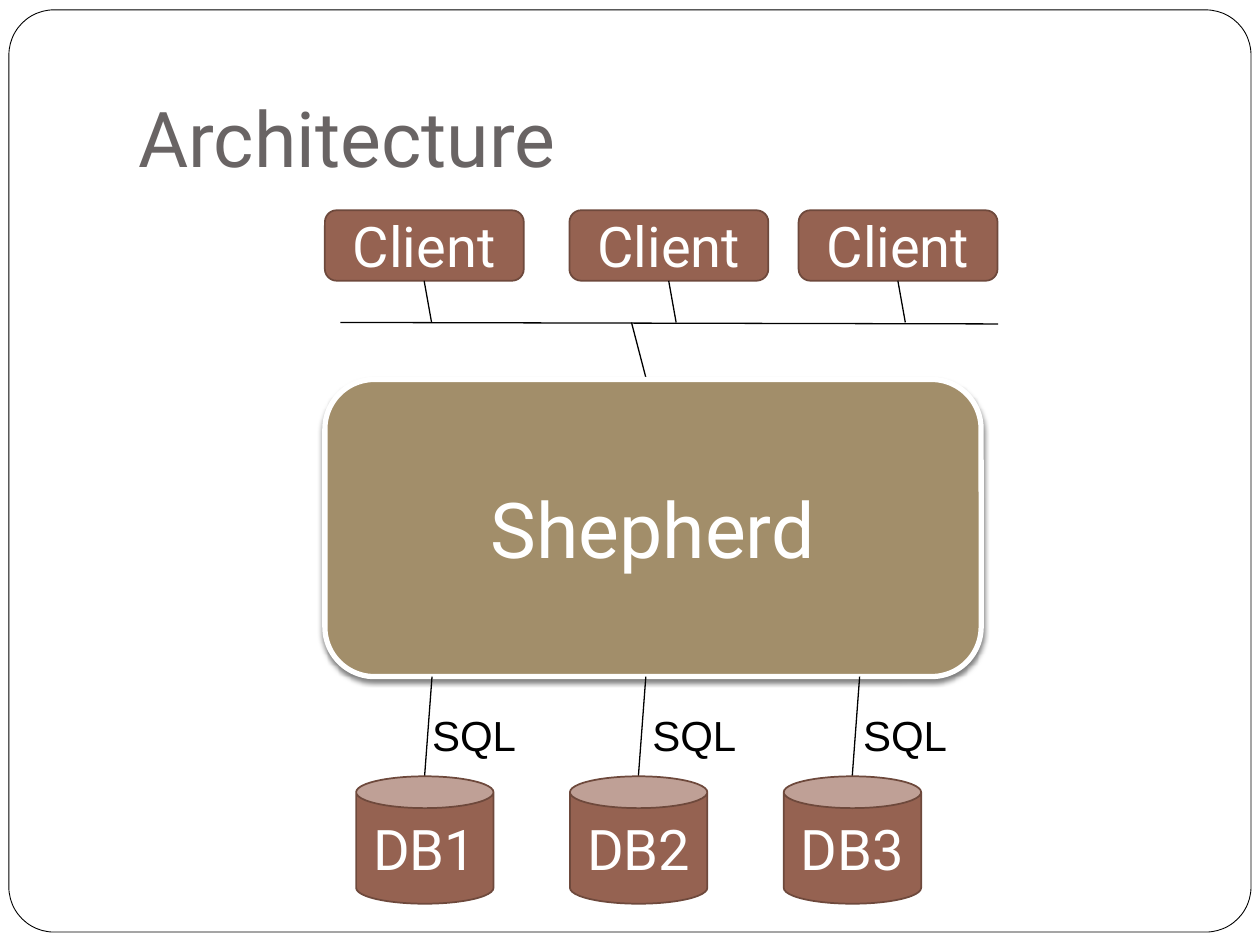
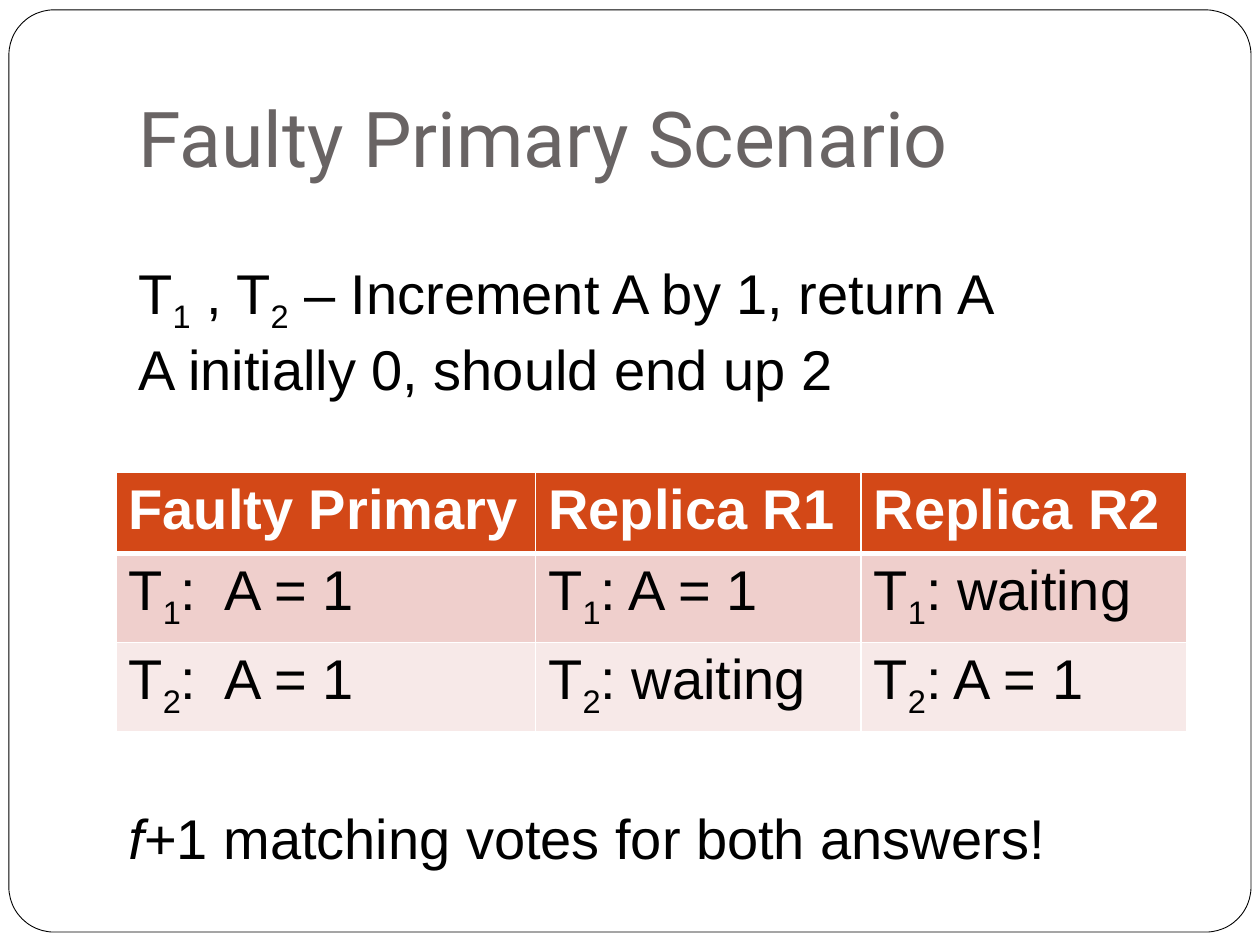
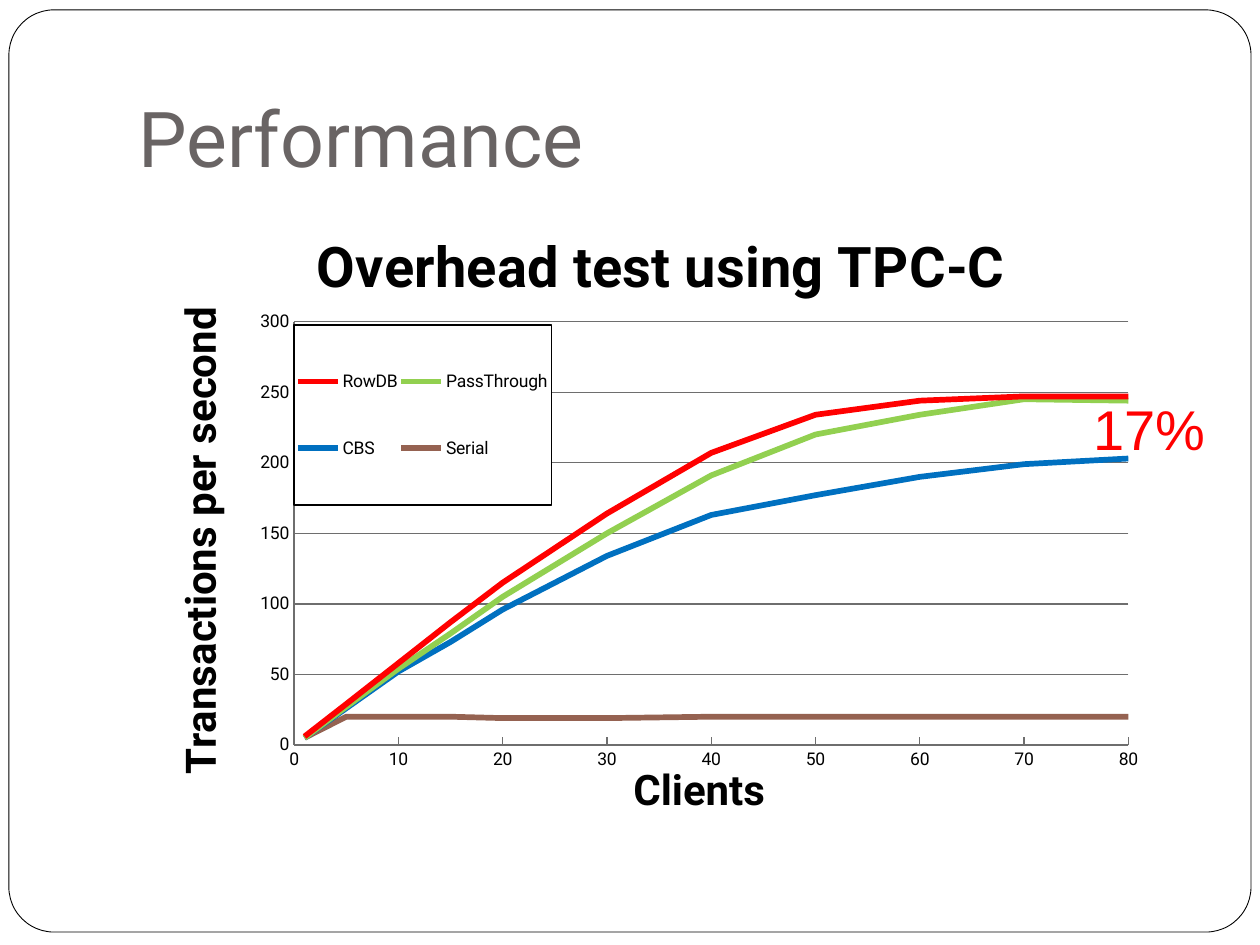
from lxml.etree import SubElement
from pptx import Presentation
from pptx.chart.data import XyChartData
from pptx.dml.color import RGBColor
from pptx.enum.chart import XL_CHART_TYPE as CHART, XL_LEGEND_POSITION as LEGEND, XL_TICK_MARK as TICK
from pptx.enum.shapes import MSO_CONNECTOR as LINE, MSO_SHAPE as SHAPE
from pptx.enum.text import MSO_ANCHOR as ANCHOR, PP_ALIGN as ALIGN
from pptx.oxml.ns import qn
from pptx.util import Cm, Pt

COLORS = {
    "white": "FFFFFF", "black": "000000", "title": "696464", "box": "956251",
    "box_edge": "6E493C", "server": "A28E6A", "header": "D34817",
    "row_dark": "EFCFCC", "row_light": "F7E9E8", "axis": "6E6E6E",
    "red": "FF0000", "green": "92D050", "blue": "0070C0",
}
HEADING, BODY = "Roboto", "Arial"

ROWS = [
    ["Faulty Primary", "Replica R1", "Replica R2"],
    ["T~1~:  A = 1", "T~1~: A = 1", "T~1~: waiting"],
    ["T~2~:  A = 1", "T~2~: waiting", "T~2~: A = 1"],
]
CLIENTS = [1, 5, 10, 15, 20, 30, 40, 50, 60, 70, 80]
RATES = [
    ("RowDB", "red", [6, 29, 58, 87, 115, 164, 207, 234, 244, 247, 247]),
    ("PassThrough", "green", [5, 27, 54, 79, 105, 150, 191, 220, 234, 245, 244]),
    ("CBS", "blue", [5, 26, 52, 73, 96, 134, 163, 177, 190, 199, 203]),
    ("Serial", "box", [5, 20, 20, 20, 19, 19, 20, 20, 20, 20, 20]),
]


def rgb(name):
    """Return the palette colour called name."""
    return RGBColor.from_string(COLORS[name])


def write(p, text, size=32, font=BODY, color="black", bold=False, italic=False):
    """Add formatted text to a paragraph, with subscripts between tildes."""
    for i, part in enumerate(text.split("~")):
        r = p.add_run()
        r.text = part
        r.font.size, r.font.name = Pt(size), font
        r.font.bold, r.font.italic = bold, italic
        r.font.color.rgb = rgb(color)
        if i % 2:
            r._r.get_or_add_rPr().set("baseline", "-25000")


def add_text(s, x, y, w, h, text, **fmt):
    """Add a text box with one paragraph per line and return its frame."""
    tf = s.shapes.add_textbox(Cm(x), Cm(y), Cm(w), Cm(h)).text_frame
    tf.word_wrap = True
    for i, line in enumerate(text.split("\n")):
        write(tf.add_paragraph() if i else tf.paragraphs[0], line, **fmt)
    return tf


def add_box(s, kind, x, y, w, h, text="", fill="box", edge="box_edge", width=1, size=32):
    """Add a filled preset shape with a centred label."""
    sp = s.shapes.add_shape(kind, Cm(x), Cm(y), Cm(w), Cm(h))
    sp.shadow.inherit = False
    sp.fill.solid()
    sp.fill.fore_color.rgb = rgb(fill)
    sp.line.color.rgb = rgb(edge)
    sp.line.width = Pt(width)
    if text:
        sp.text_frame.vertical_anchor = ANCHOR.MIDDLE
        p = sp.text_frame.paragraphs[0]
        p.alignment = ALIGN.CENTER
        write(p, text, size=size, font=HEADING, color="white")
    return sp


def add_shadow(sp):
    """Give a shape a soft shadow just below it."""
    effects = sp._element.spPr.find(qn("a:effectLst"))
    shadow = SubElement(effects, qn("a:outerShdw"), blurRad=str(Pt(3)), dist=str(Pt(2)),
                        dir="5400000", rotWithShape="0")
    color = SubElement(shadow, qn("a:srgbClr"), val=COLORS["black"])
    SubElement(color, qn("a:alpha"), val="50000")


def add_line(s, x1, y1, x2, y2):
    """Add a thin black line."""
    c = s.shapes.add_connector(LINE.STRAIGHT, Cm(x1), Cm(y1), Cm(x2), Cm(y2))
    c.line.color.rgb = rgb("black")
    c.line.width = Pt(0.75)
    SubElement(c._element.spPr, qn("a:effectLst"))


def add_slide(prs, title):
    """Add a blank slide with the rounded frame and a title."""
    s = prs.slides.add_slide(prs.slide_layouts[6])
    frame = add_box(s, SHAPE.ROUNDED_RECTANGLE, 0.18, 0.2, 25.04, 18.59,
                    fill="white", edge="black", width=0.5)
    frame.adjustments[0] = 0.049
    tf = add_text(s, 2.54, 0.76, 21.59, 3.18, title, size=44, font=HEADING, color="title")
    tf.vertical_anchor = ANCHOR.BOTTOM
    tf.margin_bottom = Cm(0.25)
    return s


def set_borders(cell, **widths):
    """Draw white cell borders with the given point widths by side."""
    for side in "LRTB":
        ln = SubElement(cell._tc.get_or_add_tcPr(), qn(f"a:ln{side}"), w=str(Pt(widths.get(side, 1))))
        SubElement(SubElement(ln, qn("a:solidFill")), qn("a:srgbClr"), val=COLORS["white"])


def add_votes_table(s, x, y, widths, row_height):
    """Add the table of replica answers."""
    table = s.shapes.add_table(len(ROWS), len(widths), Cm(x), Cm(y), Cm(sum(widths)),
                               Cm(row_height * len(ROWS))).table
    for col, w in zip(table.columns, widths):
        col.width = Cm(w)
    fills = ["header", "row_dark", "row_light"]
    edges = [{"B": 3}, {"T": 3}, {}]
    for i, texts in enumerate(ROWS):
        for j, text in enumerate(texts):
            cell = table.cell(i, j)
            set_borders(cell, **edges[i])
            cell.fill.solid()
            cell.fill.fore_color.rgb = rgb(fills[i])
            write(cell.text_frame.paragraphs[0], text, bold=i == 0,
                  color="black" if i else "white")


def add_layout(parent, index, inner=False, **box):
    """Place a chart part by fractions of the chart area."""
    for old in parent.findall(qn("c:layout")):
        parent.remove(old)
    layout = SubElement(parent, qn("c:layout"))
    parent.insert(index, layout)
    manual = SubElement(layout, qn("c:manualLayout"))
    if inner:
        SubElement(manual, qn("c:layoutTarget"), val="inner")
    for key in "xy":
        SubElement(manual, qn(f"c:{key}Mode"), val="edge")
    for key in "xywh":
        SubElement(manual, qn(f"c:{key}"), val=str(box[key]))


def format_axis(axis, title, top, step, grid):
    """Set the scale, title and lines of an axis."""
    axis.minimum_scale, axis.maximum_scale, axis.major_unit = 0, top, step
    axis.major_tick_mark, axis.minor_tick_mark = TICK.INSIDE, TICK.NONE
    axis.has_major_gridlines = grid
    lines = [axis.format.line] + ([axis.major_gridlines.format.line] if grid else [])
    for line in lines:
        line.color.rgb = rgb("axis")
        line.width = Pt(0.75)
    write(axis.axis_title.text_frame.paragraphs[0], title, size=24, font=HEADING, bold=True)


def format_legend(chart):
    """Put a framed legend over the top left of the plot."""
    chart.has_legend = True
    legend = chart.legend
    legend.position = LEGEND.RIGHT
    legend.include_in_layout = False
    e = legend._element
    add_layout(e, 1, x=0.157, y=0.2, w=0.24, h=0.286)
    sppr = SubElement(e, qn("c:spPr"))
    e.find(qn("c:overlay")).addnext(sppr)
    line = SubElement(sppr, qn("a:ln"), w=str(Pt(0.75)))
    for parent, color in ((sppr, "white"), (line, "black")):
        fill = SubElement(parent, qn("a:solidFill"))
        SubElement(fill, qn("a:srgbClr"), val=COLORS[color])
    sppr.append(line)


def add_rates_chart(s, x, y, w, h):
    """Add the chart of transaction rates by number of clients."""
    data = XyChartData()
    for name, _, rates in RATES:
        series = data.add_series(name)
        for point in zip(CLIENTS, rates):
            series.add_data_point(*point)
    chart = s.shapes.add_chart(CHART.XY_SCATTER_LINES_NO_MARKERS, Cm(x), Cm(y), Cm(w), Cm(h), data).chart
    chart.font.size, chart.font.name = Pt(10), HEADING
    chart.font.color.rgb = rgb("black")
    chart.plots[0].vary_by_categories = False
    for series, (_, color, _) in zip(chart.plots[0].series, RATES):
        series.smooth = False
        series.format.line.color.rgb = rgb(color)
        series.format.line.width = Pt(3.25)
    chart.has_title = True
    write(chart.chart_title.text_frame.paragraphs[0], "Overhead test using TPC-C",
          font=HEADING, bold=True)
    format_axis(chart.category_axis, "Clients", 80, 10, False)
    format_axis(chart.value_axis, "Transactions per second", 300, 50, True)
    format_legend(chart)
    add_layout(chart._chartSpace.chart.plotArea, 0, inner=True, x=0.157, y=0.195, w=0.779, h=0.672)


def build_architecture(prs):
    """Draw the clients, the server and its databases."""
    s = add_slide(prs, "Architecture")
    bus_y, server_top, server_bottom, db_top, slant = 6.5, 7.65, 13.64, 15.65, 0.15
    add_line(s, 6.86, bus_y, 20.12, bus_y + 0.03)
    for x in (6.55, 11.48, 16.1):
        add_box(s, SHAPE.ROUNDED_RECTANGLE, x, 4.24, 4.01, 1.42, "Client")
        add_line(s, x + 2, 5.66, x + 2 + slant, bus_y)
    add_line(s, 12.73, bus_y, 13.03, server_top)
    server = add_box(s, SHAPE.ROUNDED_RECTANGLE, 6.55, server_top, 13.23, server_bottom - server_top,
                     "Shepherd", fill="server", edge="white", width=3, size=44)
    add_shadow(server)
    for i, label_x in enumerate((8.46, 12.9, 17.15)):
        x = 7.18 + 4.31 * i
        center = x + 1.38
        add_line(s, center + slant, server_bottom, center, db_top)
        add_box(s, SHAPE.CAN, x, db_top, 2.77, 2.57, f"DB{i + 1}")
        add_text(s, label_x, 14.17, 2.34, 1.27, "SQL", size=24)


def build_scenario(prs):
    """Show the answers of a faulty primary and two replicas."""
    s = add_slide(prs, "Faulty Primary Scenario")
    add_votes_table(s, 2.34, 9.53, [8.46, 6.56, 6.56], 1.63)
    add_text(s, 2.54, 5.08, 18.03, 3,
             "T~1~ , T~2~ – Increment A by 1, return A\nA initially 0, should end up 2")
    tf = add_text(s, 2.34, 16.08, 19.15, 1.63, "f", italic=True)
    write(tf.paragraphs[0], "+1 matching votes for both answers!")


def build_performance(prs):
    """Show the measured overhead."""
    s = add_slide(prs, "Performance")
    add_rates_chart(s, 2.54, 4.01, 21.59, 12.7)
    add_text(s, 21.79, 7.82, 3.18, 1.63, "17%", color="red")


def main():
    """Build and save the presentation."""
    prs = Presentation()
    prs.slide_width, prs.slide_height = Cm(25.4), Cm(19.05)
    build_architecture(prs)
    build_scenario(prs)
    build_performance(prs)
    prs.save("out.pptx")


if __name__ == "__main__":
    main()
